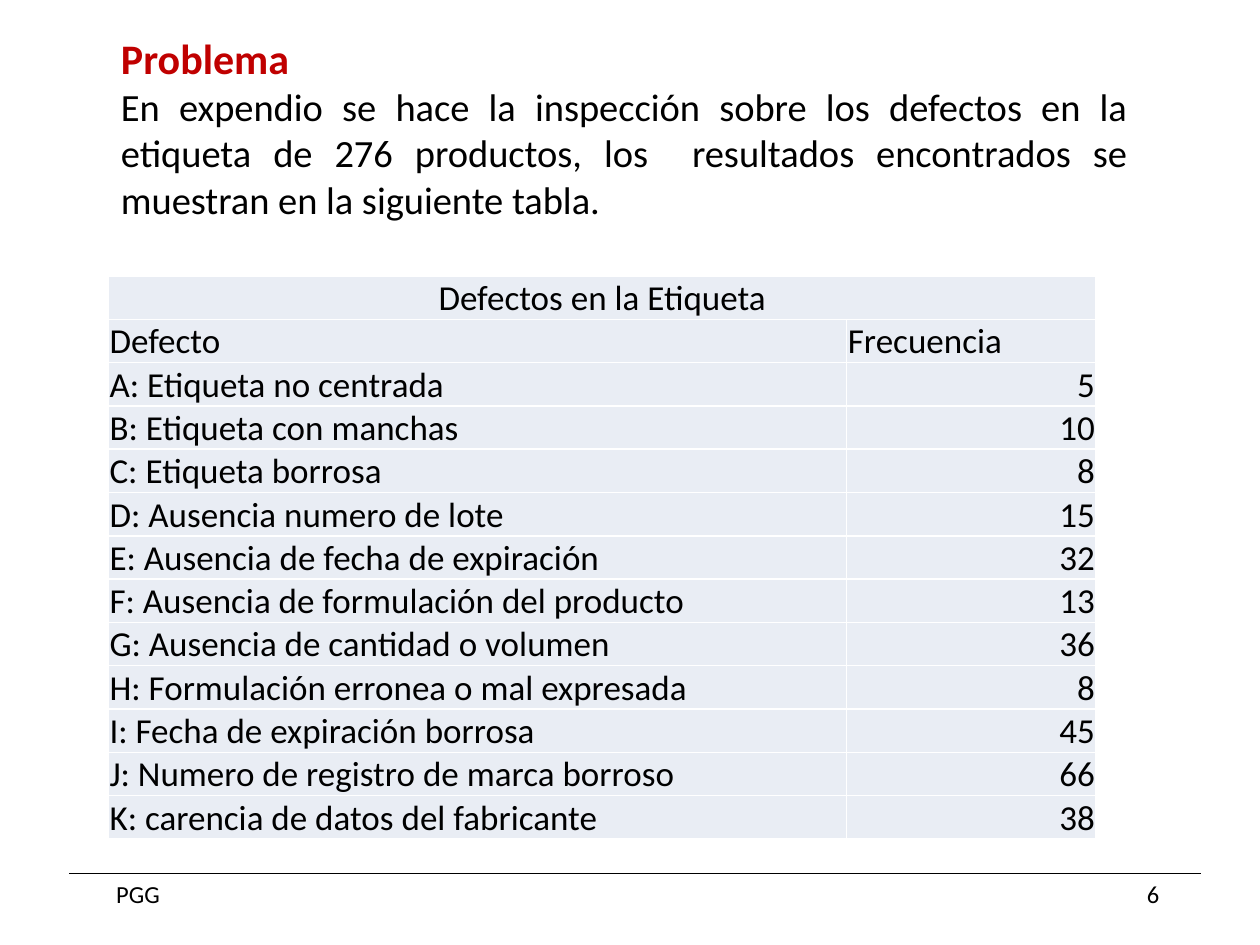
import pptx
import pptx.util
import pptx.dml.color
import pptx.enum.shapes
import pptx.enum.text
import pptx.oxml.ns
from lxml import etree

Inches = pptx.util.Inches
ALIGN = pptx.enum.text.PP_ALIGN
ANCHOR = pptx.enum.text.MSO_ANCHOR
BLACK = pptx.dml.color.RGBColor(0x00, 0x00, 0x00)
RED = pptx.dml.color.RGBColor(0xC0, 0x00, 0x00)
PALE_BLUE = pptx.dml.color.RGBColor(0xE9, 0xED, 0xF4)


def add_text(paragraph, text, size, align, color=BLACK, bold=False):
    paragraph.alignment = align
    run = paragraph.add_run()
    run.text = text
    run.font.name = "Calibri"
    run.font.size = pptx.util.Pt(size)
    run.font.bold = bold
    run.font.color.rgb = color


presentation = pptx.Presentation()
presentation.slide_width = Inches(10)
presentation.slide_height = Inches(7.5)
slide = presentation.slides.add_slide(presentation.slide_layouts[5])

# Footer: author, page number and rule
for left, text, align in ((0.78, " PGG", ALIGN.LEFT), (7.11, "6", ALIGN.RIGHT)):
    footer = slide.shapes.add_textbox(Inches(left), Inches(6.93), Inches(2.19), Inches(0.34))
    footer.text_frame.word_wrap = True
    add_text(footer.text_frame.paragraphs[0], text, 14, align)

footer_rule = slide.shapes.add_connector(
    pptx.enum.shapes.MSO_CONNECTOR.STRAIGHT,
    Inches(0.55), Inches(6.93), Inches(9.53), Inches(6.93))
footer_rule.line.color.rgb = BLACK
footer_rule.line.width = pptx.util.Pt(0.75)
etree.SubElement(footer_rule._element.spPr, pptx.oxml.ns.qn("a:effectLst"))

# Problem heading and statement
problem = slide.shapes.title
problem.left, problem.top = Inches(0.86), Inches(0.21)
problem.width, problem.height = Inches(8.19), Inches(1.62)
statement = problem.text_frame
statement.word_wrap = True
statement.auto_size = pptx.enum.text.MSO_AUTO_SIZE.NONE
statement.vertical_anchor = ANCHOR.TOP
add_text(statement.paragraphs[0], "Problema", 24, ALIGN.JUSTIFY, RED, True)
add_text(
    statement.add_paragraph(),
    "En expendio se hace la inspección sobre los defectos en la etiqueta de 276 "
    "productos, los  resultados encontrados se muestran en la siguiente tabla. ",
    22, ALIGN.JUSTIFY)

# Defect table: a merged heading, column names, then one row per defect
defects = [
    ("A: Etiqueta no centrada", 5),
    ("B: Etiqueta con manchas", 10),
    ("C: Etiqueta borrosa", 8),
    ("D: Ausencia numero de lote", 15),
    ("E: Ausencia de fecha de expiración", 32),
    ("F: Ausencia de formulación del producto", 13),
    ("G: Ausencia de cantidad o volumen", 36),
    ("H: Formulación erronea o mal expresada", 8),
    ("I: Fecha de expiración borrosa", 45),
    ("J: Numero de registro de marca borroso", 66),
    ("K: carencia de datos del fabricante", 38),
]
rows = [("Defectos en la Etiqueta", None), ("Defecto", "Frecuencia")] + defects
table = slide.shapes.add_table(
    len(rows), 2, Inches(0.86), Inches(2.19), Inches(7.84), Inches(4.44)).table
table.first_row = False
table.horz_banding = False
table.columns[0].width = Inches(5.86)
table.columns[1].width = Inches(1.98)
table.cell(0, 0).merge(table.cell(0, 1))

for row_index, values in enumerate(rows):
    table.rows[row_index].height = Inches(0.34)
    for column_index, value in enumerate(values):
        cell = table.cell(row_index, column_index)
        cell.fill.solid()
        cell.fill.fore_color.rgb = PALE_BLUE
        cell.vertical_anchor = ANCHOR.BOTTOM
        cell.margin_left = cell.margin_top = cell.margin_right = Inches(0.01)
        cell.margin_bottom = 0
        if value is None:
            continue
        if row_index == 0:
            align = ALIGN.CENTER
        else:
            align = ALIGN.RIGHT if isinstance(value, int) else ALIGN.LEFT
        add_text(cell.text_frame.paragraphs[0], str(value), 20, align)

presentation.save("out.pptx")
